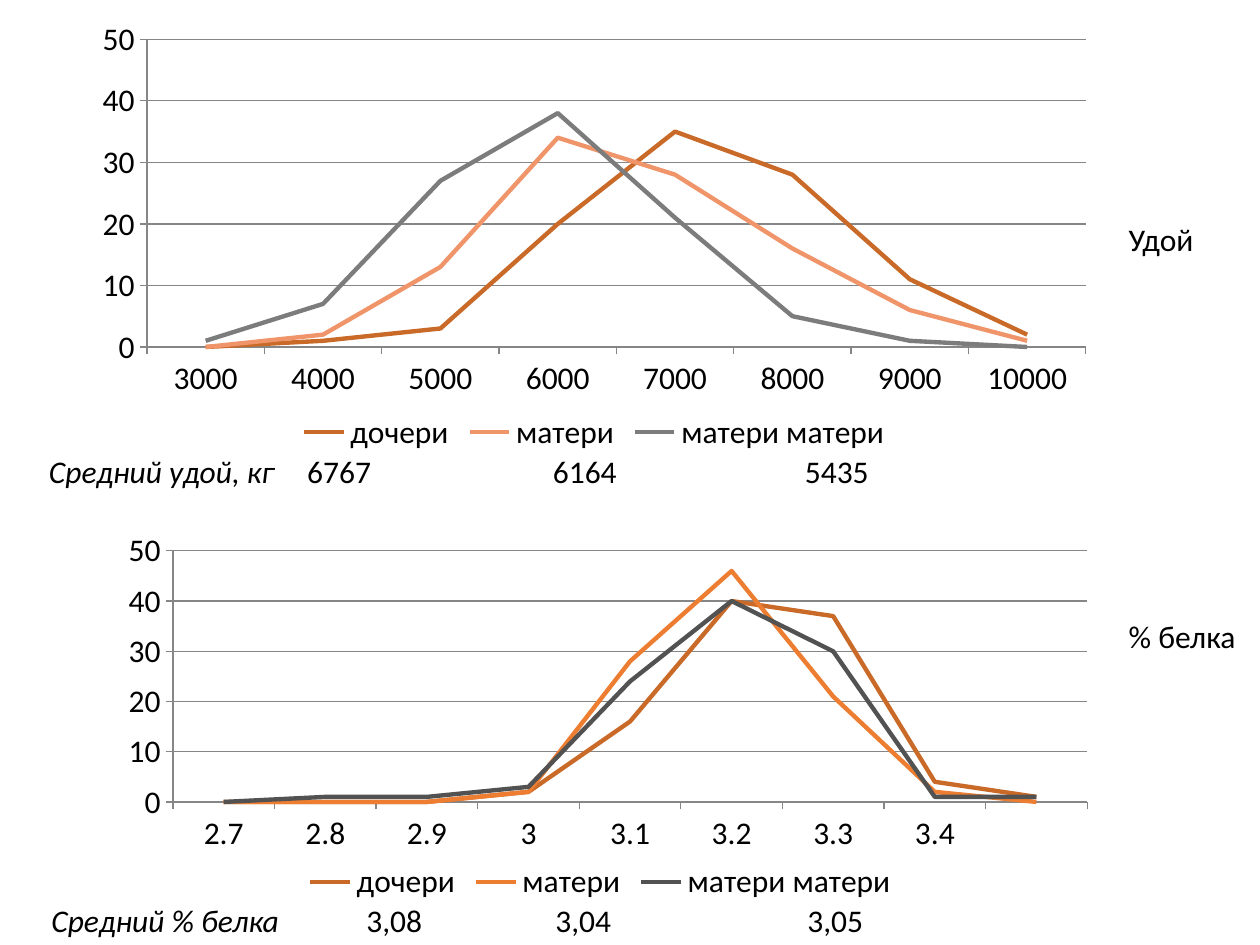
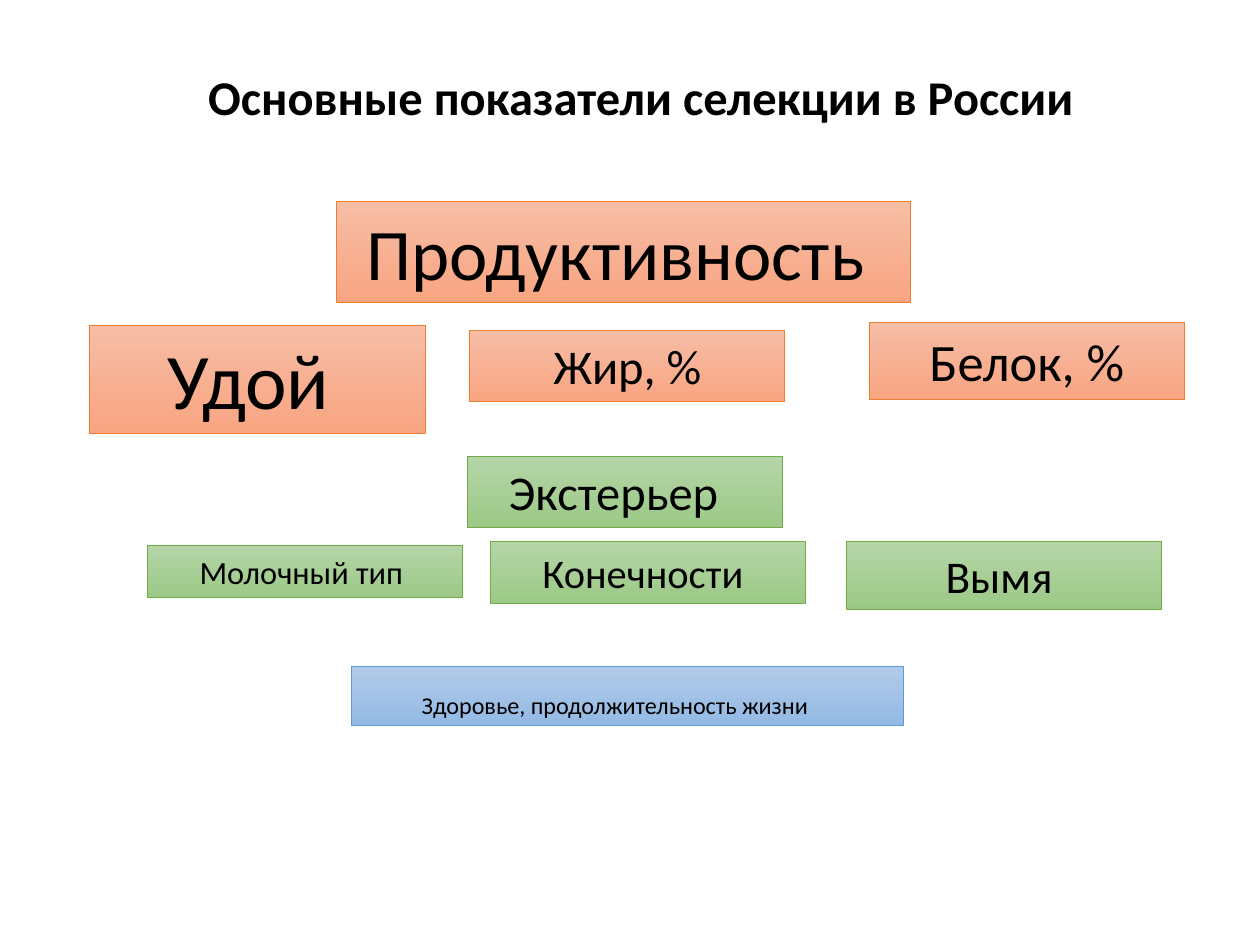
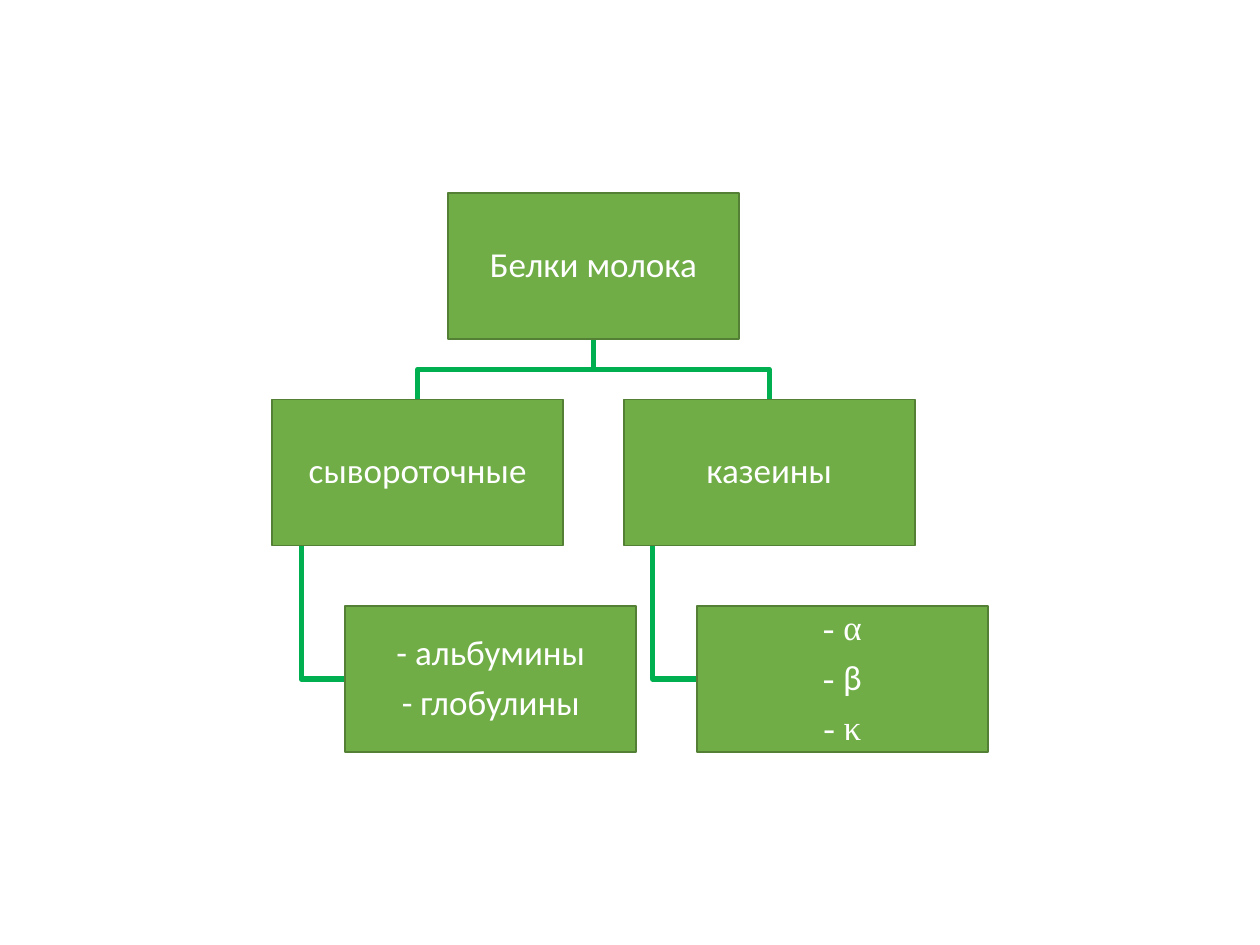
from pptx import Presentation
from pptx.chart.data import CategoryChartData as Data
from pptx.dml.color import RGBColor as RGB
from pptx.enum.chart import XL_CHART_TYPE as Kind, XL_LEGEND_POSITION as Spot, XL_TICK_MARK as Tick
from pptx.enum.shapes import MSO_SHAPE as Form
from pptx.enum.text import MSO_ANCHOR as Anchor, PP_ALIGN as Align
from pptx.oxml import parse_xml
from pptx.oxml.ns import nsdecls
from pptx.util import Inches, Pt

HEX = {
    "black": "000000", "white": "FFFFFF", "grid": "868686",
    "rust": "C96A28", "peach": "F0946A", "gray": "7C7C7C",
    "orange": "ED7D31", "dark": "525252",
    "green": "70AD47", "moss": "538035", "lime": "00B050", "blue": "5B9BD5",
}
FADE = {
    "orange": ("F7BDA5", "F8A582"),
    "green": ("B5D5A7", "9CC987"),
    "blue": ("B1CBE9", "93B9E4"),
}


def tint(name):
    return RGB.from_string(HEX[name])


def write(par, text, size=18, color="black", font="Calibri", bold=False, italic=False):
    run = par.add_run()
    run.text = text
    face = run.font
    face.name, face.size = font, Pt(size)
    face.bold, face.italic = bold, italic
    face.color.rgb = tint(color)


deck = Presentation()
deck.slide_width, deck.slide_height = Inches(10), Inches(7.5)
only, blank = deck.slide_layouts[5], deck.slide_layouts[6]

slide = deck.slides.add_slide(blank)
names = ["дочери", "матери", "матери матери"]
charts = [
    ((0.58, 0.13, 8.27, 3.5), (0.071, 0.052, 0.901, 0.698),
     ["3000", "4000", "5000", "6000", "7000", "8000", "9000", "10000"],
     [("rust", [0, 1, 3, 20, 35, 28, 11, 2]),
      ("peach", [0, 2, 13, 34, 28, 16, 6, 1]),
      ("gray", [1, 7, 27, 38, 21, 5, 1, 0])]),
    ((0.83, 4.22, 7.87, 2.98), (0.069, 0.051, 0.922, 0.669),
     ["2.7", "2.8", "2.9", "3", "3.1", "3.2", "3.3", "3.4"],
     [("rust", [0, 0, 0, 2, 16, 40, 37, 4, 1]),
      ("orange", [0, 0, 0, 2, 28, 46, 21, 2, 0]),
      ("dark", [0, 1, 1, 3, 24, 40, 30, 1, 1])]),
]
for place, inner, cats, rows in charts:
    data = Data(number_format="0")
    data.categories = cats
    for name, (color, vals) in zip(names, rows):
        data.add_series(name, vals)
    chart = slide.shapes.add_chart(Kind.LINE, *map(Inches, place), data).chart
    chart.has_title = False
    chart.font.name, chart.font.size = "Calibri", Pt(18)
    chart.font.color.rgb = tint("black")
    chart.has_legend = True
    chart.legend.position = Spot.BOTTOM
    chart.legend.include_in_layout = False
    plot = chart.plots[0]
    plot.vary_by_categories = False
    for line, (color, vals) in zip(plot.series, rows):
        line.smooth = False
        line.format.line.color.rgb = tint(color)
        line.format.line.width = Pt(2.5)
    side = chart.value_axis
    side.minimum_scale, side.maximum_scale, side.major_unit = 0, 50, 10
    side.has_major_gridlines = True
    side.tick_labels.number_format = "0"
    side.tick_labels.number_format_is_linked = False
    for axis in (side, chart.category_axis):
        axis.major_tick_mark = Tick.OUTSIDE
        axis.minor_tick_mark = Tick.NONE
    for part in (side, side.major_gridlines, chart.category_axis):
        part.format.line.color.rgb = tint("grid")
        part.format.line.width = Pt(0.75)
    area = chart.element.xpath("c:chart/c:plotArea")[0]
    for old in area.xpath("c:layout"):
        area.remove(old)
    sizes = "".join(f'<c:{tag} val="{val}"/>' for tag, val in zip("xywh", inner))
    area.insert(0, parse_xml(
        f'<c:layout {nsdecls("c")}><c:manualLayout><c:layoutTarget val="inner"/>'
        f'<c:xMode val="edge"/><c:yMode val="edge"/>{sizes}</c:manualLayout></c:layout>'))

notes = [
    (8.86, 1.7, 1.02, "", "Удой", ()),
    (8.86, 4.85, 1.1, "", "% белка", ()),
    (0.29, 3.54, 8.13, "Средний удой, кг", "\t6767\t6164\t5435", (2.05, 4, 6)),
    (0.31, 7.1, 8.13, "Средний % белка", "\t3,08\t3,04\t3,05", (2.5, 4, 6)),
]
for left, top, width, label, text, stops in notes:
    frame = slide.shapes.add_textbox(*map(Inches, (left, top, width, 0.4))).text_frame
    frame.word_wrap = True
    par = frame.paragraphs[0]
    if label:
        tabs = "".join(f'<a:tab pos="{Inches(stop)}" algn="l"/>' for stop in stops)
        par._p.get_or_add_pPr().append(parse_xml(f'<a:tabLst {nsdecls("a")}>{tabs}</a:tabLst>'))
        write(par, label, italic=True)
    write(par, text)

slide = deck.slides.add_slide(only)
title = slide.shapes.title
title.left, title.top, title.width, title.height = map(Inches, (0.78, 0.43, 8.62, 0.73))
title.text_frame.vertical_anchor = Anchor.MIDDLE
par = title.text_frame.paragraphs[0]
par.alignment, par.line_spacing = Align.CENTER, 0.9
write(par, "Основные показатели селекции в России", size=27.7, bold=True)

boxes = [
    ("Продуктивность ", 41.5, "orange", 2.67, 1.6, 4.56, 0.8),
    ("Удой ", 45, "orange", 0.71, 2.58, 2.67, 0.86),
    ("Жир, %", 27.7, "orange", 3.73, 2.62, 2.5, 0.57),
    ("Белок, %", 30, "orange", 6.9, 2.56, 2.5, 0.61),
    ("Экстерьер ", 27.7, "green", 3.71, 3.62, 2.5, 0.57),
    ("Молочный тип ", 18.5, "green", 1.17, 4.33, 2.5, 0.41),
    ("Конечности ", 23.1, "green", 3.89, 4.3, 2.5, 0.49),
    ("Вымя ", 25.9, "green", 6.72, 4.3, 2.5, 0.54),
    ("Здоровье, продолжительность жизни", 13.8, "blue", 2.79, 5.29, 4.38, 0.47),
]
insets = {"Экстерьер ": (0.1, 0.05, 0.19), "Здоровье, продолжительность жизни": (0, 0.19, 0.2)}
for text, size, color, *place in boxes:
    box = slide.shapes.add_shape(Form.RECTANGLE, *map(Inches, place))
    box.shadow.inherit = False
    box.fill.gradient()
    box.fill.gradient_angle = 270
    for stop, shade in zip(box.fill.gradient_stops, FADE[color]):
        stop.color.rgb = RGB.from_string(shade)
    box.line.color.rgb, box.line.width = tint(color), Pt(0.5)
    frame = box.text_frame
    frame.word_wrap, frame.vertical_anchor = True, Anchor.TOP
    pads = insets.get(text, (0.1, 0.05, 0.1))
    frame.margin_left, frame.margin_top, frame.margin_right = map(Inches, pads)
    par = frame.paragraphs[0]
    par.alignment = Align.CENTER
    write(par, text, size=size)

slide = deck.slides.add_slide(blank)
wide, high, root = 2.31, 1.16, 4.71
rows = [1.53, 3.17, 4.81]
roman = "Times New Roman"
nodes = [(root - wide / 2, rows[0], [[("Белки молока", "Calibri")]])]
paths = []
kids = [
    (2.16, "сывороточные", [[("- альбумины", "Calibri")], [("- глобулины", "Calibri")]]),
    (4.95, "казеины", [[("- α", roman)], [("- ", roman), ("β", "Calibri")], [("- κ", roman)]]),
]
for left, name, leaf in kids:
    nodes.append((left, rows[1], [[(name, "Calibri")]]))
    nodes.append((left + 0.58, rows[2], leaf))
    mid, stem = left + wide / 2, left + 0.23
    paths.append([(root, rows[0] + high), (root, 2.93), (mid, 2.93), (mid, rows[1])])
    paths.append([(stem, rows[1] + high), (stem, rows[2] + high / 2), (left + 0.58, rows[2] + high / 2)])

for path in paths:
    first, *rest = [(Inches(x), Inches(y)) for x, y in path]
    pen = slide.shapes.build_freeform(*first)
    pen.add_line_segments(rest, close=False)
    link = pen.convert_to_shape()
    link.shadow.inherit = False
    link.fill.background()
    link.line.color.rgb, link.line.width = tint("lime"), Pt(3)

for left, top, lines in nodes:
    node = slide.shapes.add_shape(Form.RECTANGLE, *map(Inches, (left, top, wide, high)))
    node.shadow.inherit = False
    node.fill.solid()
    node.fill.fore_color.rgb = tint("green")
    node.line.color.rgb, node.line.width = tint("moss"), Pt(1)
    frame = node.text_frame
    frame.word_wrap, frame.vertical_anchor = True, Anchor.MIDDLE
    frame.margin_left = frame.margin_right = frame.margin_top = frame.margin_bottom = Inches(0.01)
    for i, runs in enumerate(lines):
        par = frame.add_paragraph() if i else frame.paragraphs[0]
        par.alignment, par.line_spacing, par.space_after = Align.CENTER, 0.9, Pt(7)
        for text, font in runs:
            write(par, text, size=20, color="white", font=font)

deck.save("out.pptx")
